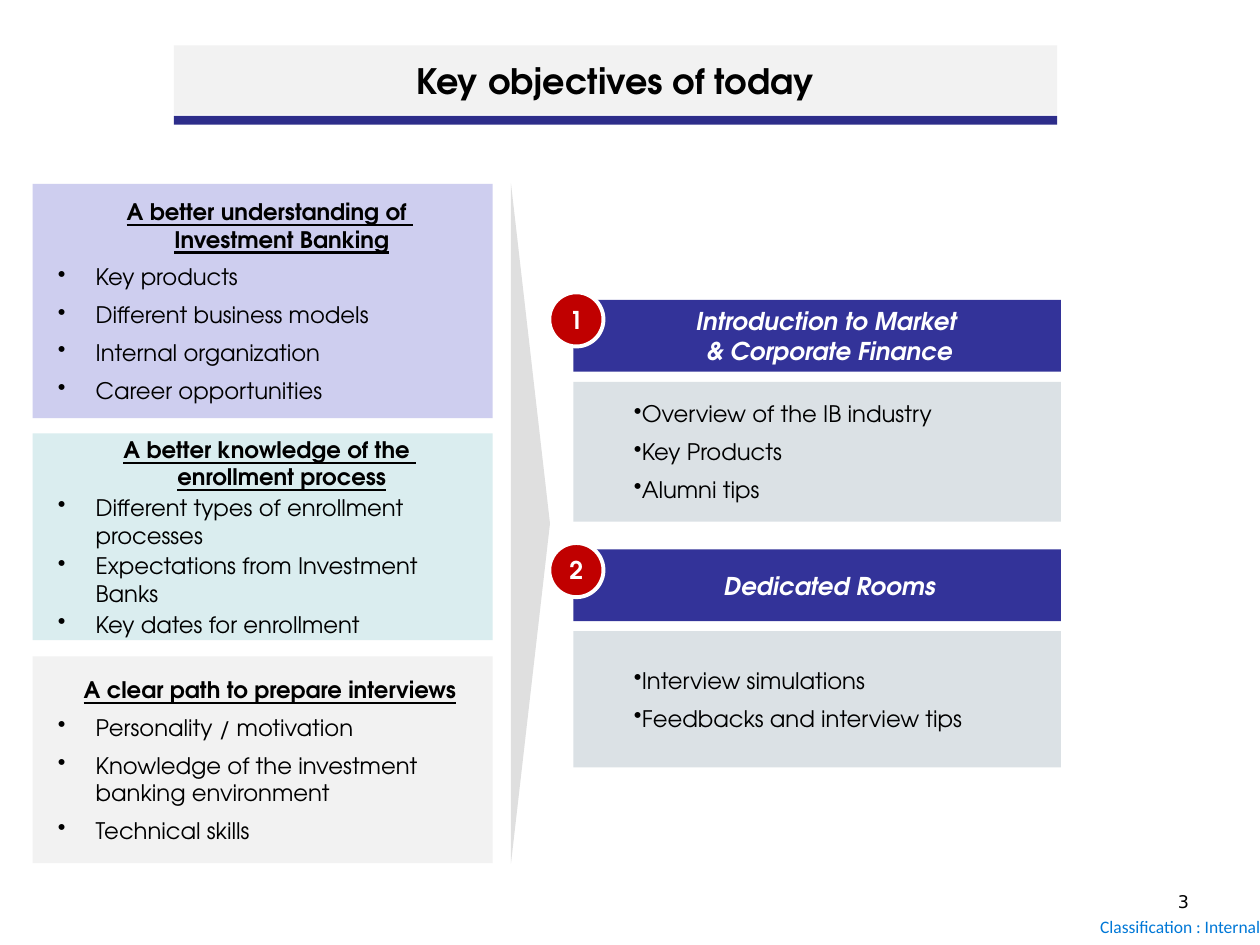
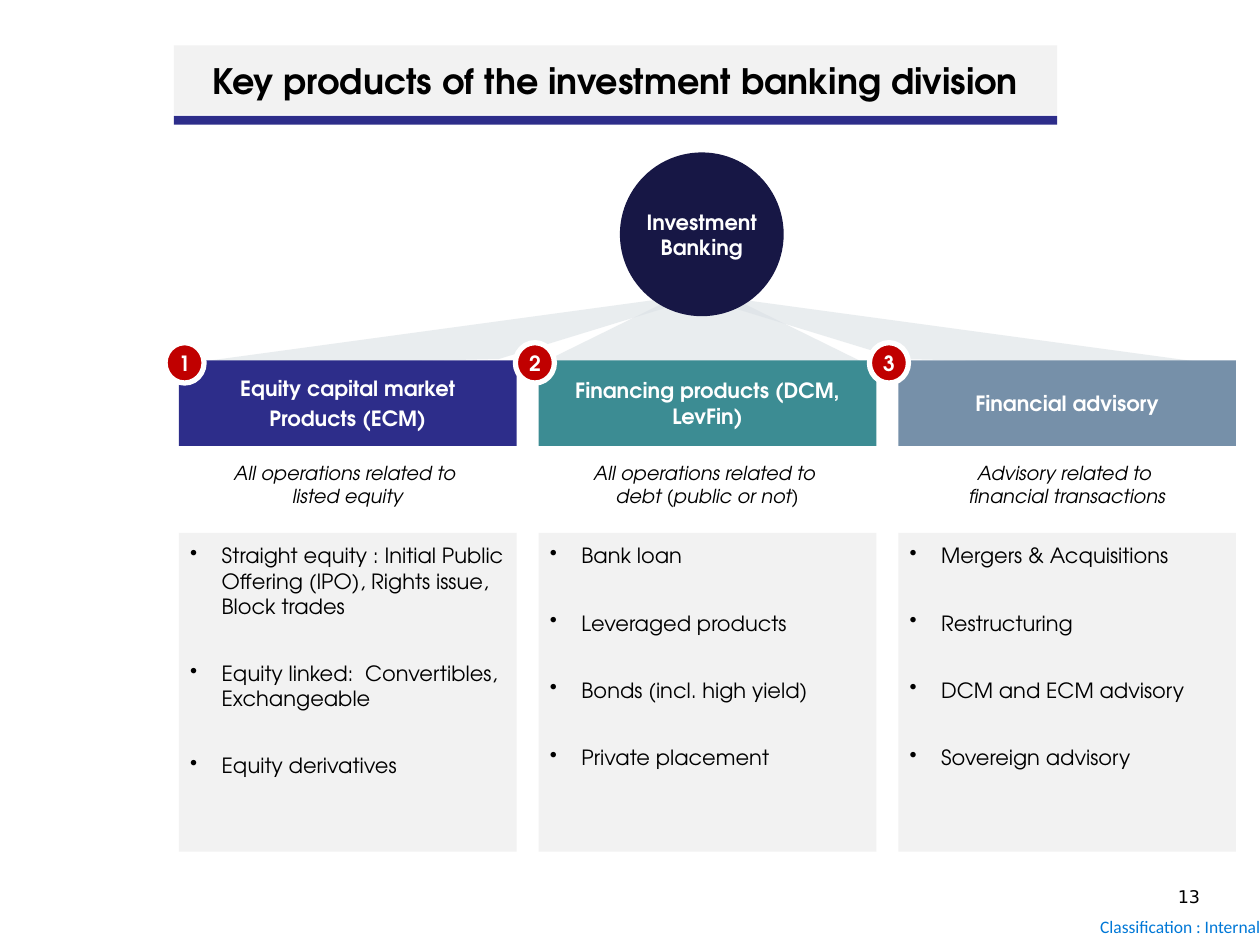
from copy import deepcopy

from pptx import Presentation
from pptx.dml.color import RGBColor
from pptx.enum.shapes import MSO_SHAPE
from pptx.enum.text import MSO_ANCHOR, PP_ALIGN
from pptx.oxml.ns import qn
from pptx.oxml.xmlchemy import OxmlElement
from pptx.util import Inches, Pt

FONT = "TeX Gyre Adventor"
BLACK, WHITE, NAVY, PALE, RED, MIST = (
    "000000", "FFFFFF", "2D2D8A", "F2F2F2", "C00000", "DBE1E5")
ALIGN = {"l": PP_ALIGN.LEFT, "c": PP_ALIGN.CENTER, "r": PP_ALIGN.RIGHT}


def color(code):
    return RGBColor.from_string(code)


def write(shape, lines, pad=(0.1, 0.05, 0.1, 0.05), middle=True, wrap=True, **style):
    """Fill a shape with paragraphs; a line may be (text, own style)."""
    frame = shape.text_frame
    frame.word_wrap = wrap
    frame.vertical_anchor = MSO_ANCHOR.MIDDLE if middle else MSO_ANCHOR.TOP
    (frame.margin_left, frame.margin_top,
     frame.margin_right, frame.margin_bottom) = map(Inches, pad)
    for i, line in enumerate([lines] if isinstance(lines, str) else lines):
        text, own = (line, {}) if isinstance(line, str) else line
        para = frame.paragraphs[0] if i == 0 else frame.add_paragraph()
        form = {**style, **own}
        if i == 0:
            form["before"] = 0
        add_para(para, text, **form)


def add_para(para, text, size=12, font=FONT, ink=BLACK, bold=False, italic=False,
             under=False, align="l", before=0, after=0, left=0, first=0, bullet=False):
    para.text = text
    para.alignment = ALIGN[align]
    para.space_before, para.space_after = Pt(before), Pt(after)
    props = para._p.get_or_add_pPr()
    props.set("marL", str(Inches(left)))
    props.set("indent", str(Inches(first)))
    if bullet:
        mark = OxmlElement("a:buChar")
        mark.set("char", "•")
        props.append(mark)
    for run in para.runs:
        face = run.font
        face.name, face.size, face.color.rgb = font, Pt(size), color(ink)
        face.bold, face.italic, face.underline = bold, italic, under
    # Line breaks take the format of the text around them
    for gap in para._p.findall(qn("a:br")):
        gap.insert(0, deepcopy(para.runs[0]._r.rPr))


class Deck:
    def __init__(self):
        self.show = Presentation()
        self.show.slide_width, self.show.slide_height = Inches(10), Inches(7.5)
        self.slide = None

    def start(self, title, number, top):
        """Open a slide with its title band, page number and footer."""
        self.slide = self.show.slides.add_slide(self.show.slide_layouts[6])
        self.box((1.38, 0.92, 7.01, 0.07), NAVY)
        self.box((1.38, 0.36, 7.01, 0.55), PALE, title, size=20, bold=True, align="c")
        self.label((9.25, top, 0.5, 0.31), number, size=10, font="DejaVu Sans",
                   middle=False)
        self.label((8.4, 7.21, 1.6, 0.29), "Classification : Internal", size=10,
                   font="Calibri", ink="0078D7", align="r", pad=(0, 0, 0, 0))

    def paint(self, shape, fill, alpha=None, edge=0):
        shape.shadow.inherit = False
        shape.fill.solid()
        shape.fill.fore_color.rgb = color(fill)
        if alpha:
            node = OxmlElement("a:alpha")
            node.set("val", str(alpha * 1000))
            shape._element.spPr.find(qn("a:solidFill"))[0].append(node)
        if edge:
            shape.line.color.rgb = color(WHITE)
            shape.line.width = Pt(edge)
        else:
            shape.line.fill.background()

    def box(self, at, fill, lines=None, kind=MSO_SHAPE.RECTANGLE, alpha=None,
            edge=0, turn=0, **style):
        shape = self.slide.shapes.add_shape(kind, *map(Inches, at))
        self.paint(shape, fill, alpha, edge)
        shape.rotation = turn
        if lines:
            write(shape, lines, **style)

    def label(self, at, lines, **style):
        write(self.slide.shapes.add_textbox(*map(Inches, at)), lines, **style)

    def fan(self, points, fill, alpha):
        spots = [(Inches(x), Inches(y)) for x, y in points]
        build = self.slide.shapes.build_freeform(*spots[0], scale=1.0)
        build.add_line_segments(spots[1:], close=True)
        self.paint(build.convert_to_shape(), fill, alpha)

    def badge(self, at, number, size, edge):
        self.box(at, RED, str(number), MSO_SHAPE.OVAL, edge=edge, size=size, ink=WHITE,
                 bold=True, align="c", pad=(0, 0, 0, 0), wrap=False)


def goals(deck):
    deck.start("Key objectives of today", "3", 7.02)

    # Objectives on the left
    blocks = [
        (1.46, 1.86, "CECEEF", 6, "A better understanding of \vInvestment Banking",
         ["Key products", "Different business models", "Internal organization",
          "Career opportunities"]),
        (3.44, 1.64, "DAEDEF", 2, "A better knowledge of the \venrollment process",
         ["Different types of enrollment processes",
          "Expectations from Investment Banks", "Key dates for enrollment"]),
        (5.21, 1.64, PALE, 6, "A clear path to prepare interviews",
         ["Personality / motivation",
          "Knowledge of the investment banking environment", "Technical skills"]),
    ]
    head = dict(bold=True, under=True, align="c", left=0.19, first=-0.19, bullet=False)
    for top, height, fill, after, title, items in blocks:
        deck.box((0.26, top, 3.65, height), fill, [(title, head), *items], size=13,
                 after=after, left=0.3, first=-0.3, bullet=True,
                 pad=(0.2, 0.09, 0.09, 0.09))

    # Wide arrow towards the agenda
    deck.box((1.51, 4, 5.4, 0.31), "606060", kind=MSO_SHAPE.ISOSCELES_TRIANGLE,
             alpha=20, turn=90)

    # Agenda on the right
    parts = [
        (2.38, 1.11, 2.32, "Introduction to Market \v& Corporate Finance",
         ["Overview of the IB industry", "Key Products", "Alumni tips"]),
        (4.36, 1.08, 4.31, "Dedicated Rooms",
         ["Interview simulations", "Feedbacks and interview tips"]),
    ]
    for i, (top, height, spot, title, items) in enumerate(parts, 1):
        deck.box((4.55, top, 3.87, 0.57), "333399", title, size=14, ink=WHITE, bold=True,
                 italic=True, align="c", left=0.2, pad=(0.09,) * 4)
        deck.box((4.55, top + 0.65, 3.87, height), MIST, items, size=13, after=6,
                 left=0.02, first=0.37, bullet=True, pad=(0.09, 0.05, 0.09, 0.05))
        deck.badge((4.36, spot, 0.43, 0.43), i, 14, 2.25)


def products(deck):
    deck.start("Key products of the investment banking division", "13", 6.98)

    # Beams from the circle, the outer two mirrored about its middle
    deck.box((4.26, 2.25, 2.64, 0.65), MIST, kind=MSO_SHAPE.ISOSCELES_TRIANGLE, alpha=60)
    beam = [(7.14, 2.85), (5.38, 2.31), (9.79, 2.91)]
    deck.fan(beam, MIST, 60)
    deck.fan([(11.1 - x, y) for x, y in beam], MIST, 60)
    deck.box((4.92, 1.21, 1.3, 1.3), "171745", "Investment Banking", MSO_SHAPE.OVAL,
             ink=WHITE, bold=True, align="c", pad=(0, 0, 0, 0))

    # One column for each product family
    columns = [
        (NAVY, 1.31, ["Equity capital market", "Products (ECM)"],
         "All operations related to \vlisted equity",
         ["Straight equity : Initial Public Offering (IPO), Rights issue, Block trades",
          "Equity linked:  Convertibles, Exchangeable", "Equity derivatives"]),
        ("3C8C93", 4.09, "Financing products (DCM, LevFin)",
         "All operations related to \vdebt (public or not)",
         ["Bank loan", "Leveraged products", "Bonds (incl. high yield)",
          "Private placement"]),
        ("7690A9", 6.9, "Financial advisory",
         "Advisory related to \vfinancial transactions",
         ["Mergers & Acquisitions", "Restructuring", "DCM and ECM advisory",
          "Sovereign advisory"]),
    ]
    step = (7.13 - 1.42) / 2
    pad = (0.08,) * 4
    for i, (fill, spot, title, note, items) in enumerate(columns):
        left = 1.42 + i * step
        deck.box((left, 2.86, 2.68, 0.68), fill, title, ink=WHITE, bold=True, align="c",
                 before=2.4, pad=(0.09,) * 4)
        deck.label((left, 3.58, 2.68, 0.55), note, size=11, italic=True, align="c",
                   pad=pad, middle=False)
        deck.box((left, 4.23, 2.68, 2.53), PALE, items, before=12, after=12, left=0.26,
                 first=-0.25, bullet=True, pad=pad, middle=False)
        deck.badge((spot, 2.72, 0.31, 0.32), i + 1, 12, 3)


def main():
    deck = Deck()
    goals(deck)
    products(deck)
    deck.show.save("out.pptx")


if __name__ == "__main__":
    main()
